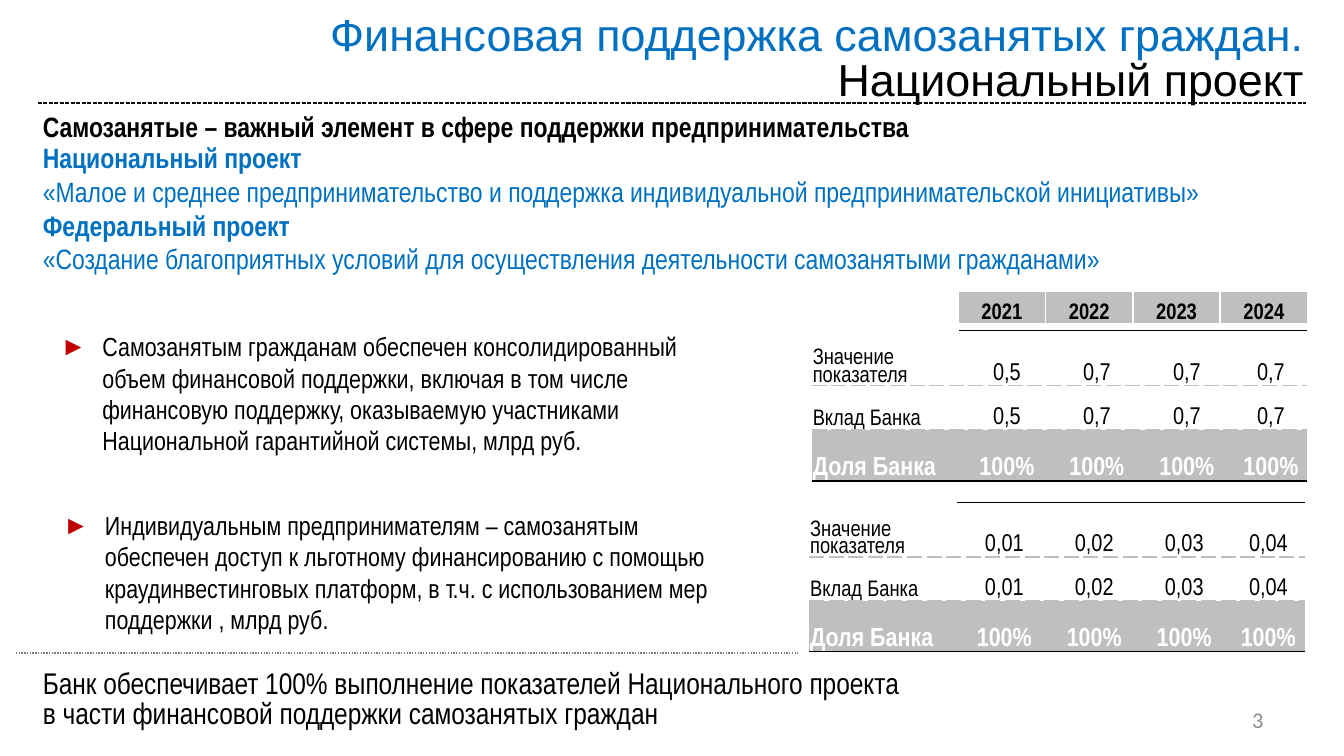
from lxml.etree import SubElement
from pptx import Presentation
from pptx.dml.color import RGBColor
from pptx.enum.dml import MSO_LINE
from pptx.enum.shapes import MSO_CONNECTOR
from pptx.enum.text import MSO_ANCHOR, MSO_AUTO_SIZE, PP_ALIGN
from pptx.oxml.ns import qn
from pptx.util import Cm, Pt

BLACK = RGBColor(0x00, 0x00, 0x00)
WHITE = RGBColor(0xFF, 0xFF, 0xFF)
BLUE = RGBColor(0x00, 0x70, 0xC0)
RED = RGBColor(0xC0, 0x00, 0x00)
SILVER = RGBColor(0xBF, 0xBF, 0xBF)
GRAY = RGBColor(0x80, 0x80, 0x80)
PALE = RGBColor(0x8C, 0x8C, 0x8C)
INK = RGBColor(0x0D, 0x0D, 0x0D)

NARROW = "Arial Narrow"
SOLID = (BLACK, 1, "solid")
DASH = (SILVER, 0.75, "sysDash")
THIN = (WHITE, 1, "solid")


def write(par, text, size=14, face=NARROW, color=BLACK, bold=False,
          align=PP_ALIGN.LEFT, line=None):
    par.alignment = align
    par.space_before = Pt(0)
    if line:
        par.line_spacing = line
    run = par.add_run()
    run.text = text
    font = run.font
    font.size, font.name, font.bold = Pt(size), face, bold
    font.color.rgb = color


def place(shape, box, anchor=MSO_ANCHOR.TOP):
    shape.left, shape.top, shape.width, shape.height = map(Cm, box)
    frame = shape.text_frame
    frame.word_wrap = True
    frame.auto_size = MSO_AUTO_SIZE.NONE
    frame.vertical_anchor = anchor
    return frame


def block(slide, box, lines, anchor=MSO_ANCHOR.TOP, **style):
    frame = place(slide.shapes.add_textbox(*map(Cm, box)), box, anchor)
    for spot, (text, bold) in enumerate(lines):
        par = frame.add_paragraph() if spot else frame.paragraphs[0]
        write(par, text, bold=bold, **style)


def head(slide, box):
    par = place(slide.shapes.title, box, MSO_ANCHOR.MIDDLE).paragraphs[0]
    for text, color in (("Финансовая поддержка самозанятых граждан. ", BLUE),
                        ("Национальный проект", BLACK)):
        write(par, text, size=24, face="Arial", color=color,
              align=PP_ALIGN.RIGHT, line=Pt(24))


def item(holder, box, text):
    par = place(holder, box).paragraphs[0]
    props = par._p.get_or_add_pPr()
    props.set("marL", str(Cm(0.79)))
    props.set("indent", str(-Cm(0.79)))
    tint = SubElement(props, qn("a:buClr"))
    SubElement(tint, qn("a:srgbClr"), val=str(RED))
    SubElement(props, qn("a:buFont"), typeface="Arial")
    SubElement(props, qn("a:buChar"), char="►")
    write(par, text)


def rule(slide, left, right, top, color, dash):
    line = slide.shapes.add_connector(
        MSO_CONNECTOR.STRAIGHT, Cm(left), Cm(top), Cm(right), Cm(top))
    line.line.color.rgb = color
    line.line.width = Pt(0.75)
    line.line.dash_style = dash
    SubElement(line._element.spPr, qn("a:effectLst"))


def edge(cell, **sides):
    props = cell._tc.get_or_add_tcPr()
    for side in "LRTB":
        look = sides.get(side)
        line = SubElement(props, qn("a:ln" + side))
        if look:
            color, width, dash = look
            line.set("w", str(Pt(width)))
            fill = SubElement(line, qn("a:solidFill"))
            SubElement(fill, qn("a:srgbClr"), val=str(color))
            SubElement(line, qn("a:prstDash"), val=dash)
        else:
            SubElement(line, qn("a:noFill"))


def paint(cell, text, fill=None, sides=None, **style):
    edge(cell, **(sides or {}))
    if fill:
        cell.fill.solid()
        cell.fill.fore_color.rgb = fill
    else:
        cell.fill.background()
    cell.vertical_anchor = MSO_ANCHOR.BOTTOM
    cell.margin_left = cell.margin_right = cell.margin_top = Cm(0.02)
    cell.margin_bottom = 0
    frame = cell.text_frame
    for spot, part in enumerate(text.split("\n")):
        par = frame.add_paragraph() if spot else frame.paragraphs[0]
        write(par, part, **style)


def grid(slide, box, wides, highs):
    table = slide.shapes.add_table(len(highs), len(wides), *map(Cm, box)).table
    table.first_row = table.horz_banding = False
    for col, wide in zip(table.columns, wides):
        col.width = Cm(wide)
    for row, high in zip(table.rows, highs):
        row.height = Cm(high)
    return table


def years(slide, box):
    table = grid(slide, box, [box[2] / 4] * 4, [box[3]])
    for col in range(4):
        paint(table.cell(0, col), str(2021 + col), SILVER,
              dict.fromkeys("LRTB", THIN), size=12, bold=True,
              align=PP_ALIGN.CENTER)


def share(slide, box, values):
    highs = [box[3] * part for part in (0.365, 0.295, 0.34)]
    table = grid(slide, box, (2.79, 1.8, 1.6, 1.8, 1.38), highs)
    rows = (("Значение\nпоказателя", values), ("Вклад Банка", values),
            ("Доля Банка", ["100%"] * 4))
    for row, (label, nums) in enumerate(rows):
        for col, text in enumerate([label, *nums]):
            last = row == 2
            sides = ({"B": DASH}, {"T": DASH, "B": DASH},
                     {"T": DASH, "B": SOLID})[row]
            if row == 0 and col:
                sides["T"] = SOLID
            paint(table.cell(row, col), text, SILVER if last else None, sides,
                  size=14 if last else 13 if col else 12,
                  color=WHITE if last else BLACK, bold=last,
                  align=PP_ALIGN.CENTER if col else PP_ALIGN.LEFT,
                  line=0.82 if "\n" in text else None)


def main():
    deck = Presentation()
    deck.slide_width, deck.slide_height = Cm(25.4), Cm(14.29)
    slide = deck.slides.add_slide(deck.slide_layouts[3])
    head(slide, (2.03, -0.05, 22.86, 2.39))
    rule(slide, 0.71, 24.69, 1.95, INK, MSO_LINE.SQUARE_DOT)
    block(slide, (0.56, 1.95, 21.95, 0.89),
          [("Самозанятые – важный элемент в сфере поддержки предпринимательства",
            True)], size=15)
    block(slide, (0.56, 2.54, 25.76, 2.82), [
        ("Национальный проект", True),
        ("«Малое и среднее предпринимательство и поддержка индивидуальной "
         "предпринимательской инициативы»", False),
        ("Федеральный проект", True),
        ("«Создание благоприятных условий для осуществления деятельности "
         "самозанятыми гражданами»", False)], size=15, color=BLUE)
    item(slide.placeholders[1], (0.89, 6.12, 13, 2.64),
         "Самозанятым гражданам обеспечен консолидированный объем финансовой "
         "поддержки, включая в том числе финансовую поддержку, оказываемую "
         "участниками Национальной гарантийной системы, млрд руб.")
    item(slide.placeholders[2], (0.94, 9.5, 13, 2.64),
         "Индивидуальным предпринимателям – самозанятым обеспечен доступ к "
         "льготному финансированию с помощью краудинвестинговых платформ, "
         "в т.ч. с использованием мер поддержки , млрд руб.")
    years(slide, (18.11, 5.51, 6.6, 0.61))
    share(slide, (15.34, 6.25, 9.37, 2.84), ["0,5", "0,7", "0,7", "0,7"])
    share(slide, (15.29, 9.5, 9.37, 2.82), ["0,01", "0,02", "0,03", "0,04"])
    rule(slide, 0.3, 15.09, 12.34, GRAY, MSO_LINE.ROUND_DOT)
    block(slide, (0.56, 12.55, 22.56, 1.4), [
        ("Банк обеспечивает 100% выполнение показателей Национального проекта",
         False),
        ("в части финансовой поддержки самозанятых граждан", False)],
        size=16, line=Pt(16))
    block(slide, (18.21, 13.23, 5.92, 0.76), [("3", False)],
          MSO_ANCHOR.MIDDLE, size=12, face="Calibri", color=PALE,
          align=PP_ALIGN.RIGHT)
    deck.save("out.pptx")


if __name__ == "__main__":
    main()
